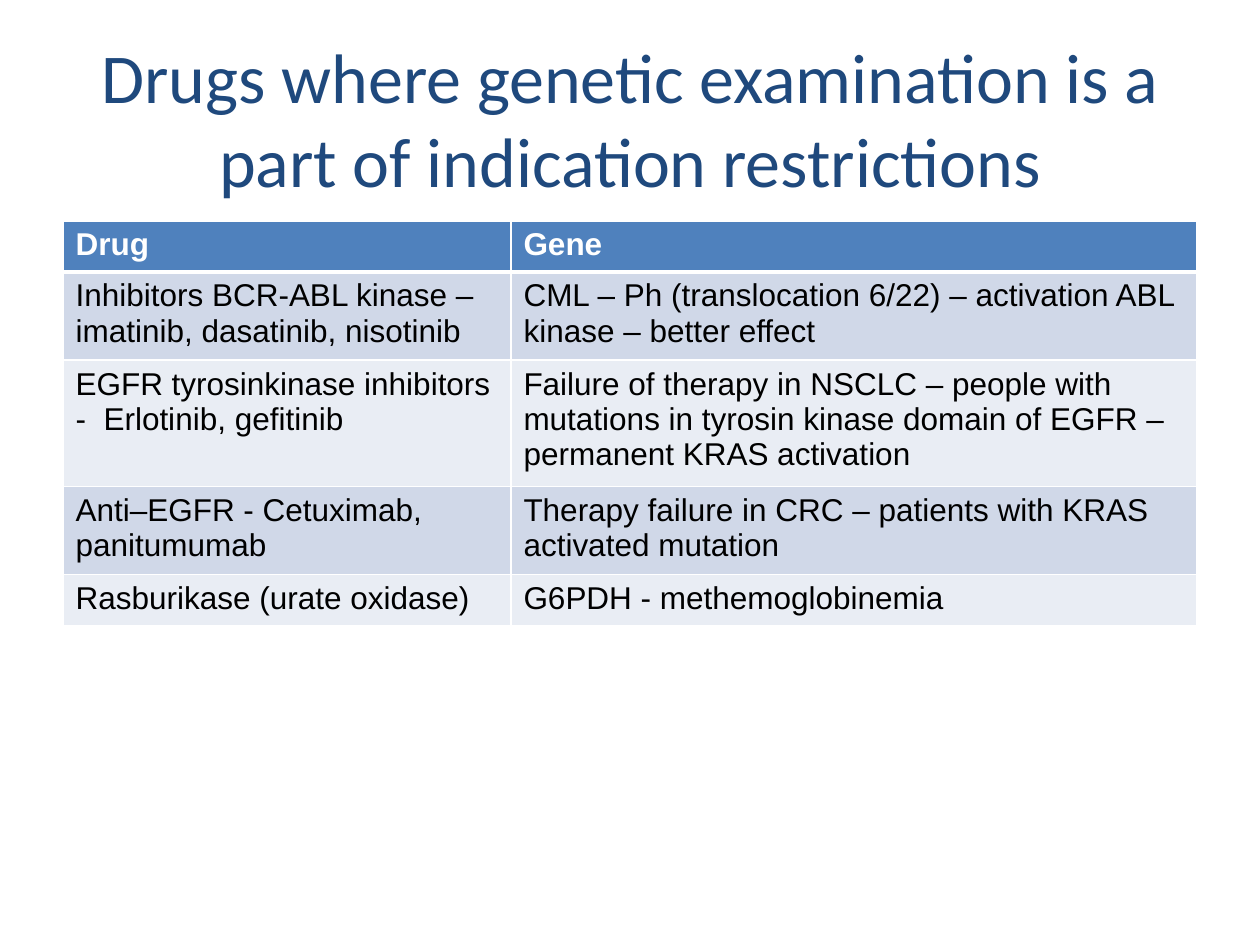
from lxml.etree import SubElement as Sub
from pptx import Presentation
from pptx.dml.color import RGBColor as Rgb
from pptx.enum.text import MSO_ANCHOR as Anchor, PP_ALIGN as Align
from pptx.oxml.ns import qn
from pptx.util import Pt

PX = 914400 // 126
HUES = {"title": "1F497D", "head": "4F81BD", "odd": "D0D8E8",
        "even": "E9EDF4", "white": "FFFFFF", "black": "000000"}
TITLE = "Drugs where genetic examination is a part of indication restrictions"
ROWS = [
    ("Drug", "Gene"),
    ("Inhibitors BCR-ABL kinase – imatinib, dasatinib, nisotinib",
     "CML – Ph (translocation 6/22) – activation ABL kinase – better effect"),
    ("EGFR tyrosinkinase inhibitors -  Erlotinib, gefitinib",
     "Failure of therapy in NSCLC – people with mutations in tyrosin kinase "
     "domain of EGFR – permanent KRAS activation"),
    ("Anti–EGFR - Cetuximab, panitumumab",
     "Therapy failure in CRC – patients with KRAS activated mutation"),
    ("Rasburikase (urate oxidase)", "G6PDH - methemoglobinemia"),
]
WIDTHS = (448, 686)
HEIGHTS = (51, 88, 126, 88, 51)


def px(*nums):
    return [n * PX for n in nums]


def hue(name):
    return Rgb.from_string(HUES[name])


def style(para, color, **form):
    for key, val in form.items():
        setattr(para.font, key, val)
    para.font.color.rgb = hue(color)


def add_title(slide, text, box):
    frame = slide.shapes.add_textbox(*px(*box)).text_frame
    frame.word_wrap = True
    frame.vertical_anchor = Anchor.MIDDLE
    para = frame.paragraphs[0]
    para.text = text
    para.alignment = Align.CENTER
    style(para, "title", name="Calibri", size=Pt(40))


def add_edge(cell, side, width):
    line = Sub(cell._tc.get_or_add_tcPr(), qn(f"a:ln{side}"), w=str(Pt(width)))
    fill = Sub(line, qn("a:solidFill"))
    Sub(fill, qn("a:srgbClr"), val=HUES["white"])


def fill_cell(cell, text, row):
    head = row == 0
    # Borders come before the fill; the rule under the header is thicker
    edges = {"L": 1, "R": 1, "T": 3 if row == 1 else 1, "B": 3 if head else 1}
    for side, width in edges.items():
        add_edge(cell, side, width)
    cell.fill.solid()
    cell.fill.fore_color.rgb = hue("head" if head else "odd" if row % 2 else "even")
    cell.text = text
    style(cell.text_frame.paragraphs[0], "white" if head else "black",
          name="Arial", size=Pt(18), bold=head)


def add_grid(slide, rows, left, top):
    box = px(left, top, sum(WIDTHS), sum(HEIGHTS))
    grid = slide.shapes.add_table(len(rows), len(WIDTHS), *box).table
    for col, width in zip(grid.columns, px(*WIDTHS)):
        col.width = width
    for row, high in zip(grid.rows, px(*HEIGHTS)):
        row.height = high
    for r, texts in enumerate(rows):
        for c, text in enumerate(texts):
            fill_cell(grid.cell(r, c), text, r)


def main():
    deck = Presentation()
    deck.slide_width, deck.slide_height = px(1260, 945)
    slide = deck.slides.add_slide(deck.slide_layouts[6])
    # Heading
    add_title(slide, TITLE, (63, 38, 1134, 158))
    # Drugs and their genes
    add_grid(slide, ROWS, 63, 221)
    deck.save("out.pptx")


if __name__ == "__main__":
    main()
